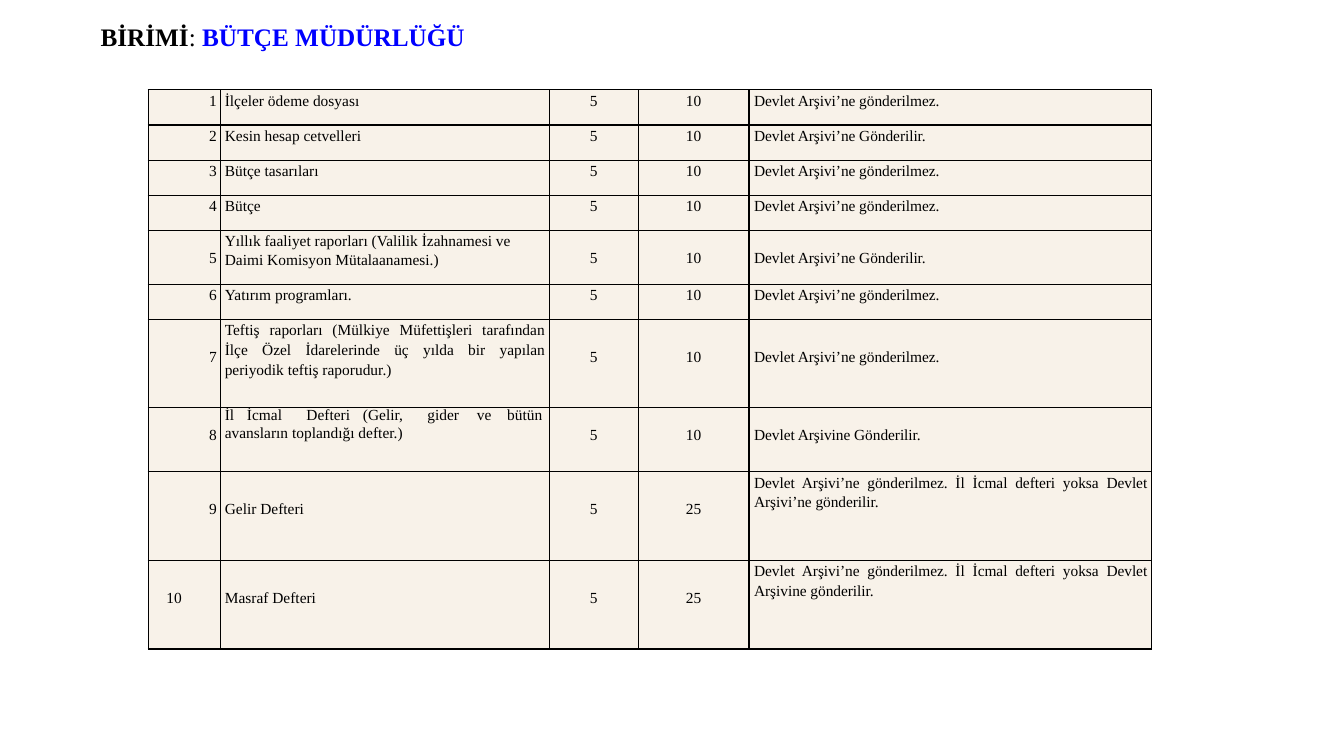
from lxml.etree import SubElement
from pptx import Presentation
from pptx.dml.color import RGBColor
from pptx.enum.text import PP_ALIGN
from pptx.oxml.ns import qn
from pptx.util import Inches, Pt

BLACK = RGBColor(0x00, 0x00, 0x00)
BLUE = RGBColor(0x00, 0x00, 0xFF)
CREAM = RGBColor(0xF8, 0xF2, 0xE9)
FONT = "Times New Roman"

# Content
heading = [("BİRİMİ", True, BLACK), (": ", False, BLACK),
           ("BÜTÇE MÜDÜRLÜĞÜ", True, BLUE)]
KEPT_OUT = "Devlet Arşivi’ne gönderilmez."
SENT = "Devlet Arşivi’ne Gönderilir."
# number, file, years in unit, years in archive, outcome
records = [
    ("1", "İlçeler ödeme dosyası", "5", "10", KEPT_OUT),
    ("2", "Kesin hesap cetvelleri", "5", "10", SENT),
    ("3", "Bütçe tasarıları", "5", "10", KEPT_OUT),
    ("4", "Bütçe", "5", "10", KEPT_OUT),
    ("5", "Yıllık faaliyet raporları (Valilik İzahnamesi ve Daimi Komisyon "
     "Mütalaanamesi.)", "5", "10", SENT),
    ("6", "Yatırım programları.", "5", "10", KEPT_OUT),
    ("7", "Teftiş raporları (Mülkiye Müfettişleri tarafından İlçe Özel "
     "İdarelerinde üç yılda bir yapılan periyodik teftiş raporudur.)",
     "5", "10", KEPT_OUT),
    ("8", "İl\tİcmal\tDefteri\t(Gelir,\tgider\tve\tbütün avansların "
     "toplandığı defter.)", "5", "10", "Devlet Arşivine Gönderilir."),
    ("9", "Gelir Defteri", "5", "25",
     "Devlet Arşivi’ne gönderilmez. İl İcmal defteri yoksa Devlet "
     "Arşivi’ne gönderilir."),
    ("10", "Masraf Defteri", "5", "25",
     "Devlet Arşivi’ne gönderilmez. İl İcmal defteri yoksa Devlet "
     "Arşivine gönderilir."),
]

# Grid, in inches
column_widths = [0.72, 3.26, 0.88, 1.1, 3.99]
row_heights = [0.35, 0.35, 0.35, 0.35, 0.53, 0.35, 0.87, 0.64, 0.88, 0.88]
column_aligns = [PP_ALIGN.RIGHT, PP_ALIGN.LEFT, PP_ALIGN.CENTER,
                 PP_ALIGN.CENTER, PP_ALIGN.LEFT]
side_margins = [(0, 0.04), (0.04, 0.04), (0, 0), (0, 0), (0.05, 0.04)]
row_drops = {4: 12, 6: 19, 7: 12, 8: 19, 9: 19}  # points above short texts
long_texts = {(4, 1), (6, 1), (7, 1), (8, 4), (9, 4)}  # start at the cell top
justified = {(6, 1), (8, 4), (9, 4)}
line_spacings = {(4, 1): Pt(13.7), (7, 1): 1.0}
ledger_tabs = [0.22, 0.81, 1.37, 2.01, 2.5, 2.8]


def add_borders(cell):
    properties = cell._tc.get_or_add_tcPr()
    for side in ("a:lnL", "a:lnR", "a:lnT", "a:lnB"):
        edge = SubElement(properties, qn(side), w=str(Pt(1)))
        fill = SubElement(edge, qn("a:solidFill"))
        SubElement(fill, qn("a:srgbClr"), val=str(BLACK))


def add_tabs(paragraph, stops):
    tabs = SubElement(paragraph._p.get_or_add_pPr(), qn("a:tabLst"))
    for stop in stops:
        SubElement(tabs, qn("a:tab"), pos=str(Inches(stop)), algn="l")


def fill_cell(cell, row, column, text):
    add_borders(cell)
    cell.fill.solid()
    cell.fill.fore_color.rgb = CREAM
    left, right = side_margins[column]
    cell.margin_left, cell.margin_right = Inches(left), Inches(right)
    cell.margin_bottom = 0
    cell.margin_top = Pt(0 if (row, column) in long_texts
                         else row_drops.get(row, 0))
    paragraph = cell.text_frame.paragraphs[0]
    paragraph.alignment = (PP_ALIGN.JUSTIFY if (row, column) in justified
                           else column_aligns[column])
    paragraph.line_spacing = line_spacings.get((row, column), 1.15)
    if "\t" in text:
        add_tabs(paragraph, ledger_tabs)
    if text == "10" and column == 0:  # the last number stands to the left
        paragraph.alignment = PP_ALIGN.LEFT
        cell.margin_left = Inches(0.18)
    run = paragraph.add_run()
    run.text = text
    if column == 4:
        run._r.get_or_add_rPr().set("spc", "-5")
    paragraph.font.name = FONT
    paragraph.font.size = Pt(11)
    paragraph.font.color.rgb = BLACK


presentation = Presentation()
presentation.slide_width = Inches(13.33)
presentation.slide_height = Inches(7.5)
slide = presentation.slides.add_slide(presentation.slide_layouts[6])

# Heading
heading_frame = slide.shapes.add_textbox(
    Inches(0.9), Inches(0.16), Inches(4.43), Inches(0.4)).text_frame
heading_frame.word_wrap = True
heading_line = heading_frame.paragraphs[0]
heading_line.font.name = FONT
heading_line.font.size = Pt(18)
for words, bold, color in heading:
    run = heading_line.add_run()
    run.text = words
    run.font.bold = bold
    run.font.color.rgb = color

# Table of records
table = slide.shapes.add_table(
    len(records), len(column_widths), Inches(1.47), Inches(0.89),
    Inches(sum(column_widths)), Inches(sum(row_heights))).table
table.first_row = False
table.horz_banding = False
for column, width in zip(table.columns, column_widths):
    column.width = Inches(width)
for row, height in zip(table.rows, row_heights):
    row.height = Inches(height)
for r, record in enumerate(records):
    for c, text in enumerate(record):
        fill_cell(table.cell(r, c), r, c, text)

presentation.save("out.pptx")
